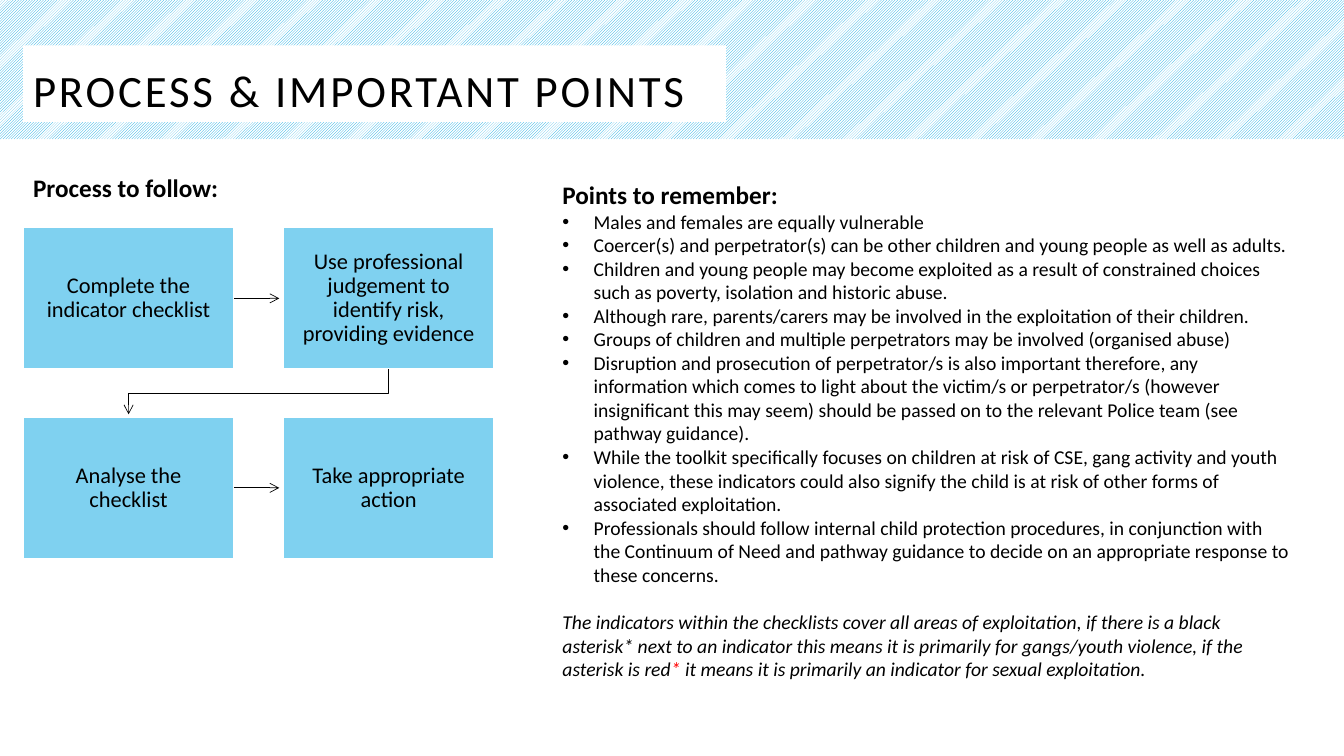
from dataclasses import dataclass

from lxml import etree
from pptx import Presentation
from pptx.dml.color import RGBColor
from pptx.enum.dml import MSO_PATTERN
from pptx.enum.shapes import MSO_CONNECTOR, MSO_SHAPE
from pptx.enum.text import MSO_ANCHOR, MSO_AUTO_SIZE, PP_ALIGN
from pptx.oxml.ns import qn
from pptx.util import Inches, Pt

RECTANGLE = MSO_SHAPE.RECTANGLE
STRAIGHT = MSO_CONNECTOR.STRAIGHT
DIAGONAL = MSO_PATTERN.LIGHT_UPWARD_DIAGONAL
MIDDLE, BOTTOM = MSO_ANCHOR.MIDDLE, MSO_ANCHOR.BOTTOM
LEFT, CENTER = PP_ALIGN.LEFT, PP_ALIGN.CENTER
FIT_TEXT = MSO_AUTO_SIZE.SHAPE_TO_FIT_TEXT
RIGHT_SIDE = 3

COLORS = {"blue": "00A4E2", "white": "FFFFFF", "black": "000000", "red": "FF0000"}
FORMATS = {
    "title": {"size": Pt(32)},
    "heading": {"size": Pt(18), "bold": True},
    "step": {"size": Pt(16)},
    "point": {"size": Pt(14)},
    "note": {"size": Pt(14), "italic": True},
}

LEFT_MARGIN = 0.23
STEP_TOP, STEP_WIDTH, STEP_HEIGHT = 2.26, 2.09, 1.4
COLUMN_PITCH, ROW_PITCH = 2.58, 1.88
ARROW_LENGTH = 0.45


@dataclass
class Step:
    text: str
    column: int
    row: int

    @property
    def left(self) -> float:
        return LEFT_MARGIN + self.column * COLUMN_PITCH

    @property
    def top(self) -> float:
        return STEP_TOP + self.row * ROW_PITCH


STEPS = [
    Step("Complete the indicator checklist", 0, 0),
    Step("Use professional judgement to identify risk, providing evidence", 1, 0),
    Step("Analyse the checklist", 0, 1),
    Step("Take appropriate action", 1, 1),
]
POINTS = [
    "Males and females are equally vulnerable",
    "Coercer(s) and perpetrator(s) can be other children and young people as well as adults.",
    "Children and young people may become exploited as a result of constrained choices "
    "such as poverty, isolation and historic abuse.",
    "Although rare, parents/carers may be involved in the exploitation of their children.",
    "Groups of children and multiple perpetrators may be involved (organised abuse)",
    "Disruption and prosecution of perpetrator/s is also important therefore, any information "
    "which comes to light about the victim/s or perpetrator/s (however insignificant this may "
    "seem) should be passed on to the relevant Police team (see pathway guidance).",
    "While the toolkit specifically focuses on children at risk of CSE, gang activity and youth "
    "violence, these indicators could also signify the child is at risk of other forms of "
    "associated exploitation.",
    "Professionals should follow internal child protection procedures, in conjunction with the "
    "Continuum of Need and pathway guidance to decide on an appropriate response to these concerns.",
]
NOTE = [
    ("The indicators within the checklists cover all areas of exploitation, if there is a black "
     "asterisk* next to an indicator this means it is primarily for gangs/youth violence, if the "
     "asterisk is red", "black"),
    ("*", "red"),
    (" it means it is primarily an indicator for sexual exploitation.", "black"),
]


def rgb(name: str) -> RGBColor:
    return RGBColor.from_string(COLORS[name])


def add_run(paragraph, text: str, style: str, color: str = "black"):
    run = paragraph.add_run()
    run.text = text
    run.font.name = "Calibri"
    run.font.color.rgb = rgb(color)
    for attribute, value in FORMATS[style].items():
        setattr(run.font, attribute, value)
    return run


def add_rectangle(slide, left: float, top: float, width: float, height: float):
    shape = slide.shapes.add_shape(
        RECTANGLE, Inches(left), Inches(top), Inches(width), Inches(height))
    shape.shadow.inherit = False
    shape.line.fill.background()
    shape.text_frame.word_wrap = True
    return shape


def add_heading_box(slide, text: str, left: float, top: float, width: float, height: float):
    box = slide.shapes.add_textbox(Inches(left), Inches(top), Inches(width), Inches(height))
    frame = box.text_frame
    frame.word_wrap = True
    frame.auto_size = FIT_TEXT
    add_run(frame.paragraphs[0], text, "heading")
    return frame


def add_bullet(paragraph) -> None:
    properties = paragraph._p.get_or_add_pPr()
    properties.set("marL", str(Inches(0.31)))
    properties.set("indent", str(Inches(-0.31)))
    etree.SubElement(properties, qn("a:buFont"), typeface="Arial")
    etree.SubElement(properties, qn("a:buChar"), char="•")


def style_arrow(arrow) -> None:
    arrow.line.color.rgb = rgb("black")
    arrow.line.width = Pt(0.5)
    line = arrow.element.spPr.find(qn("a:ln"))
    etree.SubElement(line, qn("a:tailEnd"), type="arrow")


def add_step(slide, step: Step):
    box = add_rectangle(slide, step.left, step.top, STEP_WIDTH, STEP_HEIGHT)
    box.fill.solid()
    box.fill.fore_color.rgb = rgb("blue")
    fill_color = box.element.spPr.find(qn("a:solidFill")).find(qn("a:srgbClr"))
    etree.SubElement(fill_color, qn("a:alpha"), val="50000")
    box.line.color.rgb = rgb("white")
    box.line.width = Pt(1)
    frame = box.text_frame
    frame.vertical_anchor = MIDDLE
    for side in ("left", "right", "top", "bottom"):
        setattr(frame, f"margin_{side}", Inches(0.12))
    paragraph = frame.paragraphs[0]
    paragraph.alignment = CENTER
    paragraph.line_spacing = 0.9
    add_run(paragraph, step.text, "step")
    return box


def add_row_arrow(slide, step: Step, box) -> None:
    start = step.left + STEP_WIDTH
    middle = Inches(step.top + STEP_HEIGHT / 2)
    arrow = slide.shapes.add_connector(
        STRAIGHT, Inches(start), middle, Inches(start + ARROW_LENGTH), middle)
    arrow.begin_connect(box, RIGHT_SIDE)
    style_arrow(arrow)
    etree.SubElement(arrow.element.spPr, qn("a:effectLst"))


def add_return_arrow(slide, source: Step, target: Step) -> None:
    start_x, end_x = (Inches(step.left + STEP_WIDTH / 2) for step in (source, target))
    start = source.top + STEP_HEIGHT
    bend = Inches(start + 0.24)
    builder = slide.shapes.build_freeform(start_x, Inches(start))
    builder.add_line_segments(
        [(start_x, bend), (end_x, bend), (end_x, Inches(start + ARROW_LENGTH))], close=False)
    arrow = builder.convert_to_shape()
    arrow.shadow.inherit = False
    arrow.fill.background()
    style_arrow(arrow)


def main() -> None:
    presentation = Presentation()
    presentation.slide_width = Inches(13.33)
    presentation.slide_height = Inches(7.5)
    slide = presentation.slides.add_slide(presentation.slide_layouts[6])

    # Striped banner
    banner = add_rectangle(slide, 0, 0, 13.33, 1.38)
    banner.fill.patterned()
    banner.fill.pattern = DIAGONAL
    banner.fill.fore_color.rgb = rgb("blue")
    banner.fill.back_color.rgb = rgb("white")

    # Title
    title = add_rectangle(slide, LEFT_MARGIN, 0.45, 6.97, 0.76)
    title.fill.solid()
    title.fill.fore_color.rgb = rgb("white")
    title.text_frame.vertical_anchor = BOTTOM
    paragraph = title.text_frame.paragraphs[0]
    paragraph.alignment = LEFT
    paragraph.line_spacing = 0.9
    run = add_run(paragraph, "PROCESS & IMPORTANT POINTS", "title")
    run.font._element.set("spc", "200")

    # Process diagram
    add_heading_box(slide, "Process to follow:", LEFT_MARGIN, 1.66, 4.29, 0.4)
    for step in STEPS:
        box = add_step(slide, step)
        if step.column == 0:
            add_row_arrow(slide, step, box)
    add_return_arrow(slide, STEPS[1], STEPS[2])

    # Points and closing note
    frame = add_heading_box(slide, "Points to remember:", 5.48, 1.73, 7.45, 5.12)
    for point in POINTS:
        paragraph = frame.add_paragraph()
        add_bullet(paragraph)
        add_run(paragraph, point, "point")
    paragraph = frame.add_paragraph()
    paragraph.space_before = Pt(17)
    for text, color in NOTE:
        add_run(paragraph, text, "note", color)

    presentation.save("out.pptx")


if __name__ == "__main__":
    main()
